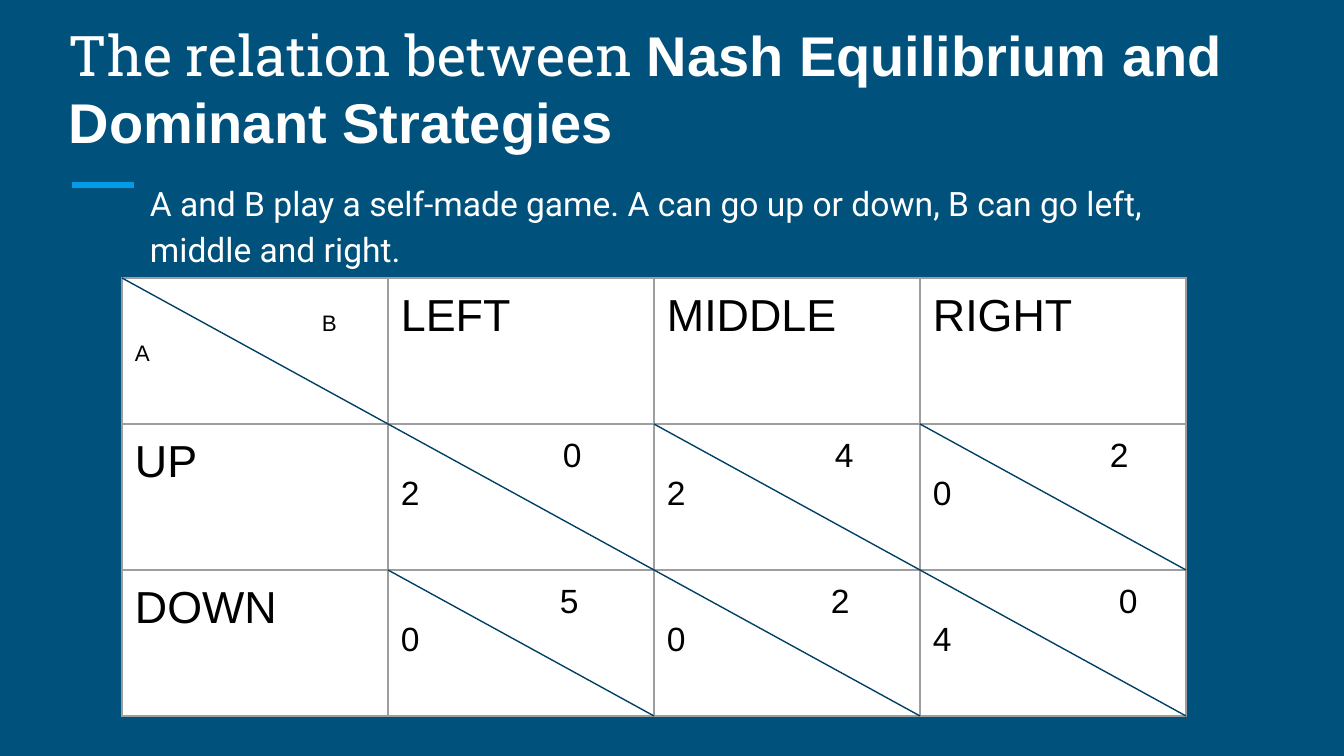
import dataclasses

import pptx
import pptx.dml.color
import pptx.enum.shapes
import pptx.enum.text
import pptx.oxml
import pptx.oxml.ns
import pptx.util

PX = 914400 / 134.4  # EMU in one px


@dataclasses.dataclass(frozen=True)
class Theme:
    background: str = "00517C"
    accent: str = "039BE5"
    light: str = "FFFFFF"
    dark: str = "000000"
    grid: str = "9E9E9E"
    diagonal: str = "004065"
    title_size: int = 30
    label_size: int = 24
    body_size: int = 18
    player_size: int = 12


theme = Theme()


def px(*lengths):
    return [pptx.util.Emu(round(n * PX)) for n in lengths]


def write(p, text, size, font="Arial", color=theme.dark, bold=False, indent=0):
    """Add a run to p; indent is the left margin of the paragraph in px."""
    r = p.add_run()
    r.text = text
    r.font.name = font
    r.font.size = pptx.util.Pt(size)
    r.font.bold = bold
    r.font.color.rgb = pptx.dml.color.RGBColor.from_string(color)
    if indent:
        p._p.get_or_add_pPr().set("marL", str(px(indent)[0]))


prs = pptx.Presentation()
prs.slide_width, prs.slide_height = px(1344, 756)
s = prs.slides.add_slide(prs.slide_layouts[5])
s.background.fill.solid()
s.background.fill.fore_color.rgb = pptx.dml.color.RGBColor.from_string(theme.background)

# Title and introduction
title = s.shapes.title
title.left, title.top, title.width, title.height = px(56, 67, 1230, 101)
intro = s.shapes.add_textbox(*px(137, 164, 1035, 427))
for sp, anchor in ((title, pptx.enum.text.MSO_ANCHOR.BOTTOM), (intro, pptx.enum.text.MSO_ANCHOR.TOP)):
    tf = sp.text_frame
    tf.word_wrap = True
    tf.auto_size = pptx.enum.text.MSO_AUTO_SIZE.NONE
    tf.vertical_anchor = anchor
    tf.margin_left, tf.margin_top, tf.margin_right, tf.margin_bottom = px(13, 13, 13, 13)
    tf.paragraphs[0].alignment = pptx.enum.text.PP_ALIGN.LEFT

p = title.text_frame.paragraphs[0]
write(p, "The relation between ", theme.title_size, font="Roboto Slab", color=theme.light)
write(p, "Nash Equilibrium and Dominant Strategies", theme.title_size, color=theme.light, bold=True)

p = intro.text_frame.paragraphs[0]
p.line_spacing = 1.15
p.space_after = pptx.util.Pt(16)
write(p, "A and B play a self-made game. A can go up or down, B can go left, middle and right.",
      theme.body_size, font="Roboto", color=theme.light)

# Payoff table: a label, or (B's text, A's text, indent of B's text in px)
LEFT, TOP, COL, ROW = 122, 278, 266, 146
payoffs = [
    [("B", "A", 187), "LEFT", "MIDDLE", "RIGHT"],
    ["UP", ("0", "2", 162), ("4", "2", 168), ("2", "0", 177)],
    ["DOWN", ("5", "0", 159), ("2", "0", 164), ("0", "4", 186)],
]
table = s.shapes.add_table(3, 4, *px(LEFT, TOP, 4 * COL, 3 * ROW)).table
table.first_row = table.horz_banding = False
for column in table.columns:
    column.width = px(COL)[0]
for row, contents in zip(table.rows, payoffs):
    row.height = px(ROW)[0]
    for cell, content in zip(row.cells, contents):
        tcPr = cell._tc.get_or_add_tcPr()
        for side in ("lnL", "lnR", "lnT", "lnB"):
            tcPr.append(pptx.oxml.parse_xml(
                f'<a:{side} {pptx.oxml.ns.nsdecls("a")} w="9525"><a:solidFill>'
                f'<a:srgbClr val="{theme.grid}"/></a:solidFill></a:{side}>'))
        cell.fill.solid()
        cell.fill.fore_color.rgb = pptx.dml.color.RGBColor.from_string(theme.light)
        cell.margin_left, cell.margin_top, cell.margin_right, cell.margin_bottom = px(13, 13, 13, 13)
        tf = cell.text_frame
        if isinstance(content, str):
            write(tf.paragraphs[0], content, theme.label_size)
            continue
        b_text, a_text, indent = content
        size = theme.body_size
        a_line = tf.add_paragraph()
        if b_text == "B":  # the players' names sit lower and smaller
            size = theme.player_size
            cell.margin_top = px(33)[0]
            a_line.space_before = pptx.util.Pt(2.5)
        write(tf.paragraphs[0], b_text, size, indent=indent)
        write(a_line, a_text, size)

# Accent rule, then diagonals between (column, row) corners of the table
lines = [((72, 185, 134, 185), theme.accent, 3)]
for c1, r1, c2, r2 in ((0, 0, 3, 3), (2, 1, 4, 3), (3, 1, 4, 2), (1, 2, 2, 3)):
    ends = (LEFT + c1 * COL, TOP + r1 * ROW, LEFT + c2 * COL, TOP + r2 * ROW)
    lines.append((ends, theme.diagonal, 0.75))
for ends, color, width in lines:
    line = s.shapes.add_connector(pptx.enum.shapes.MSO_CONNECTOR.STRAIGHT, *px(*ends))
    line.line.color.rgb = pptx.dml.color.RGBColor.from_string(color)
    line.line.width = pptx.util.Pt(width)
    line._element.spPr.append(pptx.oxml.parse_xml(f'<a:effectLst {pptx.oxml.ns.nsdecls("a")}/>'))

prs.save("out.pptx")
